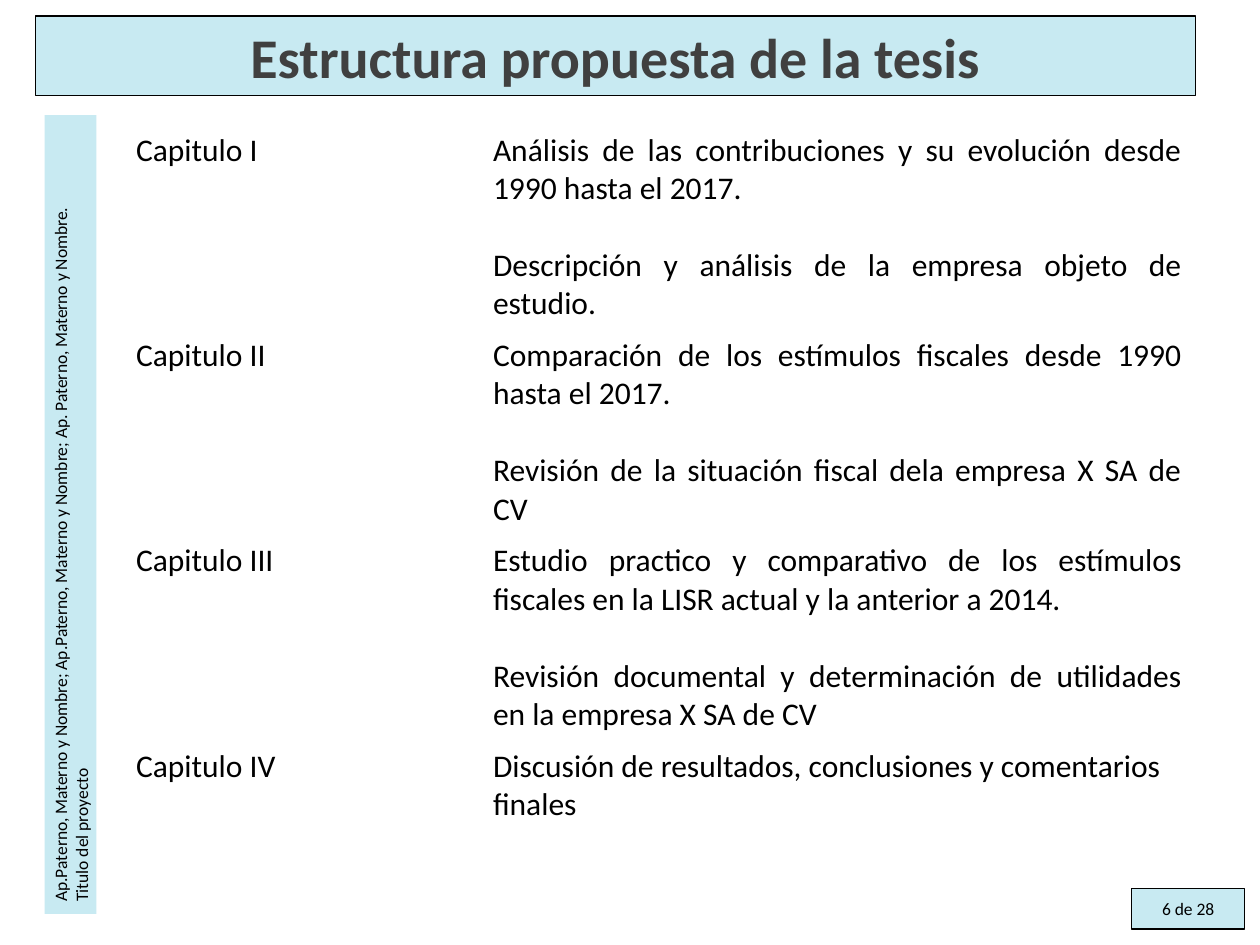
from dataclasses import dataclass

from pptx import Presentation
from pptx import util as u
from pptx.dml.color import RGBColor
from pptx.enum import shapes, text

SLIDE_W, SLIDE_H = 10, 7.5
FONT = "Calibri"
PALE_BLUE, BLACK, CHARCOAL = "C8EAF2", "000000", "404040"
LINE_GAP = 22  # one line of 18 pt text, in points


@dataclass
class Panel:
    """A pale box; its place is given as shares of the slide's size."""
    lines: list[str]
    x: float
    y: float
    w: float
    h: float
    size: int
    color: str = BLACK
    bold: bool = False
    align: text.PP_ALIGN = text.PP_ALIGN.CENTER
    rotation: int = 0
    outlined: bool = True


@dataclass
class Chapter:
    name: str
    topics: list[str]
    height: float = 1.63
    align: text.PP_ALIGN = text.PP_ALIGN.JUSTIFY


PANELS = [
    Panel(["6 de 28"], 0.898, 0.94, 0.09, 0.043, 10),
    Panel(["Estructura propuesta de la tesis"], 0.028, 0.017, 0.921, 0.084, 32,
          color=CHARCOAL, bold=True),
    Panel(["Ap.Paterno, Materno y Nombre; Ap.Paterno, Materno y Nombre; "
           "Ap. Paterno, Materno y Nombre.", "Titulo del proyecto"],
          -0.261, 0.517, 0.634, 0.055, 10,
          align=text.PP_ALIGN.LEFT, rotation=270, outlined=False),
]

CHAPTERS = [
    Chapter("Capitulo I", [
        "Análisis de las contribuciones y su evolución desde 1990 hasta el 2017.",
        "Descripción y análisis de la empresa objeto de estudio."]),
    Chapter("Capitulo II", [
        "Comparación de los estímulos fiscales desde 1990 hasta el 2017.",
        "Revisión de la situación fiscal dela empresa X SA de CV"]),
    Chapter("Capitulo III", [
        "Estudio practico y comparativo de los estímulos fiscales en la LISR "
        "actual y la anterior a 2014.",
        "Revisión documental y determinación de utilidades en la empresa X SA de CV"]),
    Chapter("Capitulo IV", [
        "Discusión de resultados, conclusiones y comentarios finales"],
        height=1.07, align=text.PP_ALIGN.LEFT),
]


def rgb(color: str) -> RGBColor:
    return RGBColor.from_string(color)


def write(frame, lines: list[str], size: int, color: str = BLACK,
          bold: bool = False, align=text.PP_ALIGN.LEFT, gap: int = 0) -> None:
    """Write one paragraph per line, with a gap in points between them."""
    frame.text = "\n".join(lines)
    for index, paragraph in enumerate(frame.paragraphs):
        paragraph.alignment = align
        paragraph.space_before = u.Pt(gap if index else 0)
        for run in paragraph.runs:
            run.font.name = FONT
            run.font.size = u.Pt(size)
            run.font.bold = bold
            run.font.color.rgb = rgb(color)


def draw_panel(slide, panel: Panel) -> None:
    box = slide.shapes.add_shape(
        shapes.MSO_SHAPE.RECTANGLE,
        u.Inches(panel.x * SLIDE_W), u.Inches(panel.y * SLIDE_H),
        u.Inches(panel.w * SLIDE_W), u.Inches(panel.h * SLIDE_H))
    box.rotation = panel.rotation
    box.shadow.inherit = False
    box.fill.solid()
    box.fill.fore_color.rgb = rgb(PALE_BLUE)
    if panel.outlined:
        box.line.color.rgb = rgb(BLACK)
        box.line.width = u.Pt(0.75)
    else:
        box.line.fill.background()
    box.text_frame.word_wrap = True
    box.text_frame.vertical_anchor = text.MSO_ANCHOR.MIDDLE
    write(box.text_frame, panel.lines, panel.size, panel.color, panel.bold, panel.align)


def draw_chapters(slide, chapters: list[Chapter]) -> None:
    """Chapter names take one third of the width, topics two thirds."""
    width = 8.5
    outline = slide.shapes.add_table(
        len(chapters), 2, u.Inches(0.98), u.Inches(0.99), u.Inches(width),
        u.Inches(sum(chapter.height for chapter in chapters))).table
    outline.first_row = outline.horz_banding = False
    for column, share in zip(outline.columns, (1, 2)):
        column.width = u.Inches(width * share / 3)
    for index, chapter in enumerate(chapters):
        outline.rows[index].height = u.Inches(chapter.height)
        name, topics = outline.cell(index, 0), outline.cell(index, 1)
        write(name.text_frame, [chapter.name], 18)
        write(topics.text_frame, chapter.topics, 18, align=chapter.align, gap=LINE_GAP)
        for cell in (name, topics):
            cell.fill.background()


def main() -> None:
    deck = Presentation()
    deck.slide_width, deck.slide_height = u.Inches(SLIDE_W), u.Inches(SLIDE_H)
    slide = deck.slides.add_slide(deck.slide_layouts[6])
    # Page number, title and authors' strip
    for panel in PANELS:
        draw_panel(slide, panel)
    # Chapter outline
    draw_chapters(slide, CHAPTERS)
    deck.save("out.pptx")


if __name__ == "__main__":
    main()
